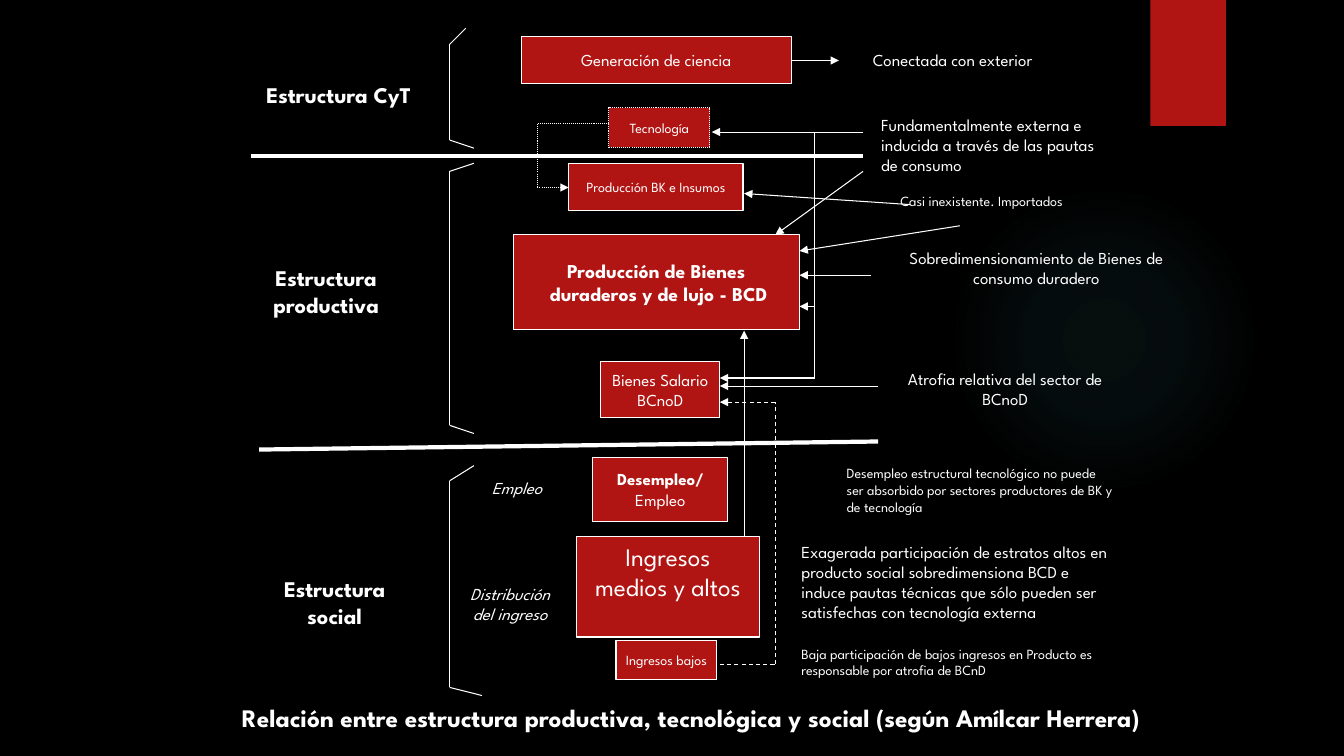
from dataclasses import dataclass
from itertools import pairwise

from pptx import Presentation
from pptx.dml.color import RGBColor
from pptx.enum.dml import MSO_LINE
from pptx.enum.shapes import MSO_CONNECTOR, MSO_SHAPE
from pptx.enum.text import MSO_ANCHOR, MSO_AUTO_SIZE, PP_ALIGN
from pptx.oxml import parse_xml
from pptx.oxml.ns import nsdecls, qn
from pptx.slide import Slide
from pptx.util import Inches, Pt

BLACK = RGBColor(0x00, 0x00, 0x00)
RED = RGBColor(0xB0, 0x15, 0x13)
WHITE = RGBColor(0xFF, 0xFF, 0xFF)
TEAL = RGBColor(0x50, 0xB9, 0xC1)
FONT = "League Spartan"
CENTER, LEFT = PP_ALIGN.CENTER, PP_ALIGN.LEFT
TOP, MIDDLE = MSO_ANCHOR.TOP, MSO_ANCHOR.MIDDLE
RECTANGLE, OVAL = MSO_SHAPE.RECTANGLE, MSO_SHAPE.OVAL
STRAIGHT = MSO_CONNECTOR.STRAIGHT
DOTTED, DASHED = MSO_LINE.ROUND_DOT, MSO_LINE.DASH
NO_FIT = MSO_AUTO_SIZE.NONE


@dataclass
class Region:
    """A part of the slide whose contents are placed from its corner."""

    slide: Slide
    left: float
    top: float

    def frame(self, left, top, width, height):
        """Return slide lengths for a box given relative to the region."""
        return (Inches(self.left + left), Inches(self.top + top),
                Inches(width), Inches(height))


def write(frame, lines, size, align, bold=False, italic=False):
    """Fill a text frame with one paragraph per line."""
    for index, line in enumerate(lines):
        para = frame.paragraphs[0] if index == 0 else frame.add_paragraph()
        para.text = line
        para.alignment = align
        font = para.font
        font.name, font.size, font.color.rgb = FONT, Pt(size), WHITE
        font.bold, font.italic = bold, italic


def add_label(region, box, text, size=12, align=LEFT, **style):
    """Place wrapped free text."""
    frame = region.slide.shapes.add_textbox(*region.frame(*box)).text_frame
    frame.word_wrap = True
    write(frame, [text], size, align, **style)


def add_box(region, box, lines, size=12, bold=False, anchor=MIDDLE, dash=None):
    """Place a red outlined box with centred lines and return it."""
    shape = region.slide.shapes.add_shape(RECTANGLE, *region.frame(*box))
    shape.shadow.inherit = False
    shape.fill.solid()
    shape.fill.fore_color.rgb = RED
    shape.line.color.rgb = WHITE
    shape.line.width = Pt(0.75)
    if dash:
        shape.line.dash_style = dash
    frame = shape.text_frame
    frame.word_wrap = False
    frame.vertical_anchor = anchor
    write(frame, lines, size, CENTER, bold)
    return shape


def add_line(region, *points, arrow=True, width=0.75, dash=None):
    """Join points with straight lines, with an arrowhead at the last point."""
    for start, end in pairwise(points):
        ends = [Inches(value) for x, y in (start, end)
                for value in (region.left + x, region.top + y)]
        connector = region.slide.shapes.add_connector(STRAIGHT, *ends)
        line = connector.line
        line.color.rgb = WHITE
        line.width = Pt(width)
        if dash:
            line.dash_style = dash
        if arrow and end == points[-1]:
            line._get_or_add_ln().append(
                parse_xml(f'<a:tailEnd {nsdecls("a")} type="triangle"/>'))
        connector._element.spPr.append(
            parse_xml(f'<a:effectLst {nsdecls("a")}/>'))


def add_bracket(region, top, bottom, rise, drop, upper=0.24, lower=0.24):
    """Draw the bracket that spans a region."""
    spine = 2.46
    add_line(region, (spine + upper, top - rise), (spine, top),
             (spine, bottom), (spine + lower, bottom + drop), arrow=False)


def add_backdrop(region):
    """Draw the soft glow and the red tab of the theme."""
    shapes = region.slide.shapes
    glow = shapes.add_shape(OVAL, *region.frame(0, 1.83, 3.08, 3.08))
    tab = shapes.add_shape(RECTANGLE, *region.frame(2, 0, 0.75, 1.25))
    for shape in (glow, tab):
        shape.shadow.inherit = False
        shape.line.fill.background()
    glow.fill.background()
    stops = "".join(
        f'<a:gs pos="{place}000"><a:srgbClr val="{TEAL}">'
        f'<a:alpha val="{alpha}000"/></a:srgbClr></a:gs>'
        for place, alpha in ((0, 7), (36, 6), (69, 0)))
    properties = glow._element.spPr
    properties.replace(properties.find(qn("a:noFill")), parse_xml(
        f'<a:gradFill {nsdecls("a")}><a:gsLst>{stops}</a:gsLst>'
        '<a:path path="circle"><a:fillToRect l="50000" t="50000" r="50000" '
        'b="50000"/></a:path></a:gradFill>'))
    tab.fill.solid()
    tab.fill.fore_color.rgb = RED
    tab._element.spPr.find(qn("a:effectLst")).append(parse_xml(
        f'<a:outerShdw {nsdecls("a")} blurRad="{Pt(3)}" dist="{Pt(2)}" '
        f'dir="5400000"><a:srgbClr val="{BLACK}"><a:alpha val="45000"/>'
        '</a:srgbClr></a:outerShdw>'))


def add_science(region):
    """Build the science and technology structure."""
    add_label(region, (0.26, 0.76, 2.2, 0.37), "Estructura CyT", 16, CENTER, bold=True)
    add_bracket(region, 0.44, 1.39, 0.16, 0.08, upper=0.16)
    add_box(region, (3.17, 0.36, 2.68, 0.47), ["Generación de ciencia"])
    add_box(region, (4.04, 1.07, 1, 0.39), ["Tecnología"], 10, dash=DOTTED)
    add_label(region, (6.56, 0.44, 2.23, 0.3), "Conectada con exterior")
    add_label(region, (6.64, 1.09, 2.52, 0.71),
              "Fundamentalmente externa e inducida a través de las pautas de consumo")
    add_line(region, (5.85, 0.6), (6.32, 0.6))
    add_line(region, (6.56, 1.31), (5.06, 1.31))


def add_production(region):
    """Build the productive structure."""
    add_label(region, (0.41, 1.07, 1.65, 0.64), "Estructura productiva", 16, CENTER, bold=True)
    add_bracket(region, 0.2, 2.72, 0.08, 0.08)
    add_box(region, (3.64, 0.12, 1.73, 0.47), ["Producción BK e Insumos"], 10)
    add_box(region, (3.09, 0.83, 2.84, 0.94),
            ["Producción de Bienes", " duraderos y de lujo - BCD"], 14, bold=True)
    add_box(region, (3.96, 2.09, 1.18, 0.55), ["Bienes Salario", "BCnoD"])
    add_label(region, (6.71, 0.36, 2.05, 0.44), "Casi inexistente. Importados", 10, CENTER)
    add_label(region, (6.85, 0.91, 2.86, 0.5),
              "Sobredimensionamiento de Bienes de consumo duradero", align=CENTER)
    add_label(region, (6.79, 2.11, 2.36, 0.5),
              "Atrofia relativa del sector de BCnoD", align=CENTER)
    for start, end in (((7.03, 0.53), (5.38, 0.42)),
                       ((6.64, 1.23), (5.93, 1.23)),
                       ((6.71, 2.33), (5.14, 2.33)),
                       ((6.56, 0.2), (5.69, 0.83)),
                       ((7.52, 0.74), (5.93, 0.99))):
        add_line(region, start, end)


def add_society(region):
    """Build the social structure."""
    add_label(region, (0.65, 1.16, 1.34, 0.64), "Estructura social", 16, CENTER, bold=True)
    add_bracket(region, 0.27, 2.32, 0.15, 0.08, lower=0.32)
    add_label(region, (2.78, 0.19, 0.87, 0.3), "Empleo", italic=True)
    add_label(region, (2.48, 1.24, 1.16, 0.5), "Distribución del ingreso",
              align=CENTER, italic=True)
    jobs = add_box(region, (3.88, 0.04, 1.34, 0.63), ["Desempleo/", "Empleo"])
    jobs.text_frame.paragraphs[0].font.bold = True
    add_box(region, (3.72, 0.82, 1.81, 1), ["Ingresos", "medios y altos"], 18, anchor=TOP)
    add_box(region, (4.11, 1.85, 1, 0.39), ["Ingresos bajos"], 10)
    add_label(region, (6.3, 0.06, 2.86, 0.6),
              "Desempleo estructural tecnológico no puede ser absorbido por "
              "sectores productores de BK y de tecnología", 10)
    add_label(region, (5.85, 0.82, 3.31, 1.11),
              "Exagerada participación de estratos altos en producto social "
              "sobredimensiona BCD e induce pautas técnicas que sólo pueden ser "
              "satisfechas con tecnología externa")
    add_label(region, (5.85, 1.85, 3.15, 0.61),
              "Baja participación de bajos ingresos en Producto es responsable "
              "por atrofia de BCnD", 10)


def add_links(region):
    """Draw the dividers and the arrows that cross between structures."""
    for start, end in (((0.49, 1.55), (6.56, 1.55)), ((0.57, 4.46), (6.71, 4.38))):
        add_line(region, start, end, arrow=False, width=3)
    add_line(region, (4.04, 1.23), (3.33, 1.23), (3.33, 1.86), (3.64, 1.86), dash=DOTTED)
    add_line(region, (5.14, 6.59), (5.69, 6.59), (5.69, 3.99), (5.14, 3.99), dash=DASHED)
    add_line(region, (6.08, 1.31), (6.08, 3.75), (5.14, 3.75))
    add_line(region, (6.08, 3.04), (5.93, 3.04))
    add_line(region, (5.38, 5.32), (5.38, 3.28))


def add_title(region):
    """Set the slide title along the foot."""
    title = region.slide.shapes.title
    title.left, title.top, title.width, title.height = region.frame(0, 0, 11.33, 0.4)
    frame = title.text_frame
    frame.word_wrap = True
    frame.auto_size = NO_FIT
    frame.vertical_anchor = TOP
    write(frame, ["Relación entre estructura productiva, tecnológica y social "
                  "(según Amílcar Herrera)"], 18, CENTER, bold=True)


def main():
    """Build and save the deck."""
    deck = Presentation()
    deck.slide_width, deck.slide_height = Inches(13.33), Inches(7.5)
    page = deck.slides.add_slide(deck.slide_layouts[5])
    page.background.fill.solid()
    page.background.fill.fore_color.rgb = BLACK
    add_backdrop(Region(page, 9.41, 0))
    add_science(Region(page, 2, 0))
    add_production(Region(page, 2, 1.5))
    add_society(Region(page, 2, 4.5))
    add_links(Region(page, 2, 0))
    add_title(Region(page, 1.19, 6.92))
    deck.save("out.pptx")


if __name__ == "__main__":
    main()
